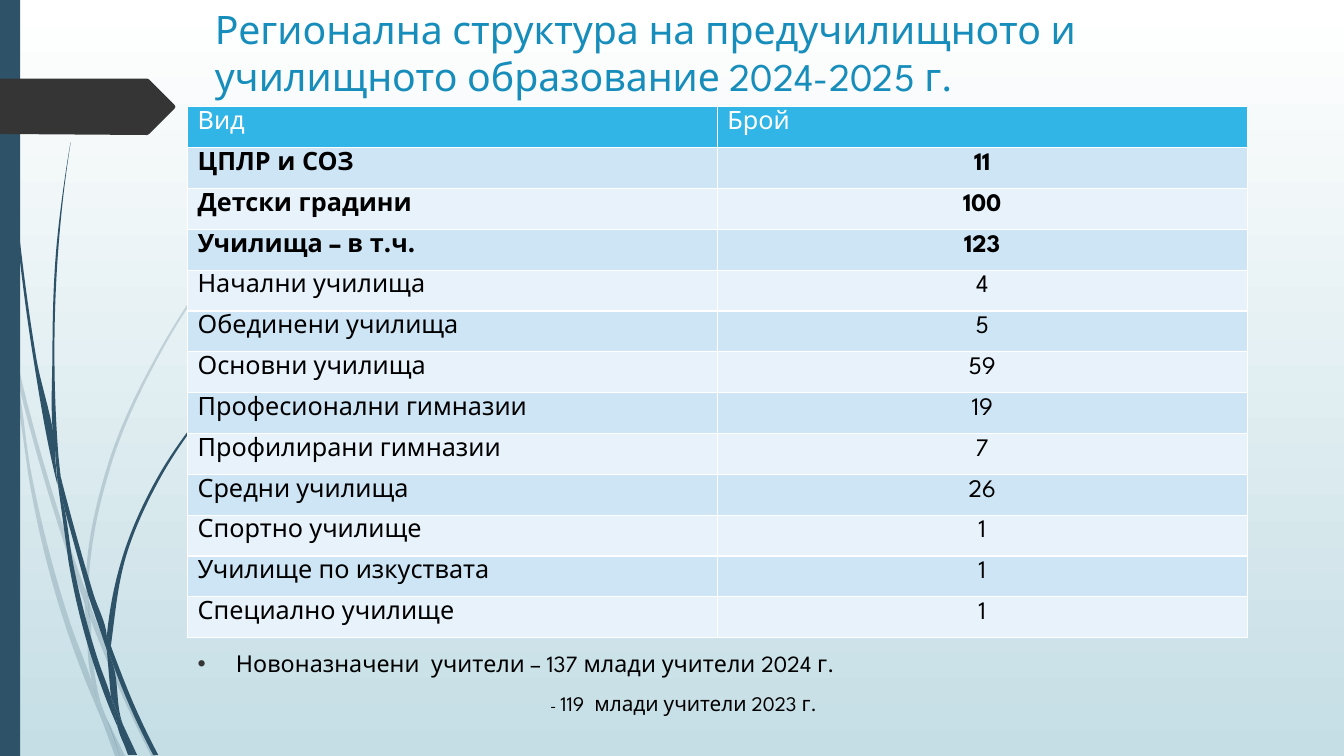
from math import dist

from lxml import etree
from pptx import Presentation
from pptx.dml.color import RGBColor
from pptx.enum.shapes import MSO_SHAPE
from pptx.enum.text import MSO_ANCHOR, MSO_AUTO_SIZE, PP_ALIGN
from pptx.oxml.ns import qn
from pptx.util import Pt

RECT = MSO_SHAPE.RECTANGLE
TOP = MSO_ANCHOR.TOP
NO_FIT = MSO_AUTO_SIZE.NONE
LEFT, CENTER = PP_ALIGN.LEFT, PP_ALIGN.CENTER

PX = 9144
FONT = "League Spartan"
WHITE = RGBColor(0xFF, 0xFF, 0xFF)
BLACK = RGBColor(0x00, 0x00, 0x00)
MIST = RGBColor(0xC5, 0xDE, 0xE5)
NAVY = RGBColor(0x2E, 0x53, 0x69)
CHARCOAL = RGBColor(0x35, 0x35, 0x35)
TITLE_BLUE = RGBColor(0x17, 0x8D, 0xBB)
HEADER_BLUE = RGBColor(0x31, 0xB4, 0xE6)
BAND_DARK = RGBColor(0xCE, 0xE5, 0xF5)
BAND_LIGHT = RGBColor(0xE8, 0xF2, 0xFA)

PALE_STEMS = [
    ([(11, 350), (9, 322), (0, 282)], [(0, 299), (10, 344)]),
    ([(14, 345), (62, 520), (85, 586)], [(84, 599), (58, 522), (17, 376)]),
    ([(88, 596), (92, 607), (127, 692), (155, 750)],
     [(150, 750), (123, 694), (88, 610)]),
    ([(105, 711), (124, 750)], [(119, 750)]),
    ([(11, 350), (17, 376), (31, 469), (70, 619), (93, 683), (99, 707), (101, 714)],
     [(92, 693), (65, 621), (28, 470)]),
    ([(84, 599), (88, 608), (91, 646), (103, 706), (105, 711)],
     [(96, 692), (93, 683), (87, 646)]),
    ([(312, 153), (268, 197), (228, 244), (158, 348), (107, 461), (85, 584), (85, 586)],
     [(88, 596), (88, 584), (110, 462), (160, 349), (229, 245), (268, 198), (312, 154)]),
    ([(101, 714), (119, 750)], [(114, 750)]),
    ([(85, 586), (88, 596), (88, 610)], [(88, 608), (84, 599)]),
    ([(93, 683), (96, 692), (105, 711), (119, 750)], [(101, 714), (99, 707)]),
]
DARK_STEMS = [
    ([(3, 0), (4, 48), (7, 110), (17, 233), (33, 355), (56, 477), (57, 481)],
     [(55, 457), (55, 453), (36, 355), (19, 232), (8, 109), (5, 48), (4, 0)]),
    ([(60, 472), (93, 590), (106, 631), (106, 645)], [(88, 592), (64, 505)]),
    ([(110, 641), (113, 649), (136, 706), (157, 749)],
     [(152, 749), (132, 708), (111, 656)]),
    ([(57, 477), (64, 505), (72, 556), (98, 657), (110, 691), (116, 717), (117, 722)],
     [(111, 708), (93, 659), (68, 557)]),
    ([(70, 141), (62, 193), (56, 245), (52, 349), (55, 449), (60, 472)],
     [(58, 453), (54, 349), (58, 245), (63, 193), (70, 142)]),
    ([(122, 719), (136, 749)], [(133, 749)]),
    ([(55, 449), (60, 472), (64, 505)], [(57, 477), (55, 453)]),
    ([(260, 344), (245, 358), (231, 373), (204, 405), (156, 474), (122, 551), (106, 631)],
     [(110, 641), (111, 633), (125, 552), (158, 476), (205, 406), (231, 374), (245, 359), (261, 344)]),
    ([(117, 722), (131, 749)], [(127, 749)]),
    ([(106, 645), (109, 651), (111, 656), (121, 716), (122, 719)],
     [(116, 706), (110, 691)]),
    ([(106, 631), (110, 641), (111, 656)], [(109, 651), (106, 645)]),
    ([(110, 691), (116, 706), (122, 719), (133, 749)],
     [(130, 749), (117, 722), (116, 717)]),
]
ARROW = [(0, 78), (146, 78), (148, 79), (173, 104), (174, 106),
         (173, 108), (148, 133), (146, 134), (0, 133)]
ROWS = [
    ("Вид", "Брой"),
    ("ЦПЛР и СОЗ", "11"),
    ("Детски градини", "100"),
    ("Училища – в т.ч.", "123"),
    ("Начални училища", "4"),
    ("Обединени училища", "5"),
    ("Основни училища", "59"),
    ("Професионални гимназии", "19"),
    ("Профилирани гимназии", "7"),
    ("Средни училища", "26"),
    ("Спортно училище", "1"),
    ("Училище по изкуствата", "1"),
    ("Специално училище", "1"),
]


def add_text(p, text, size=18, color=BLACK, bold=False, align=LEFT):
    p.alignment = align
    r = p.add_run()
    r.text = text
    r.font.name = FONT
    r.font.size = Pt(size)
    r.font.bold = bold
    r.font.color.rgb = color


def bezier_handles(points):
    if len(points) < 3:
        return []
    spans = [dist(a, b) for a, b in zip(points, points[1:])]
    slopes = [[(q - o) / d for o, q in zip(a, b)]
              for a, b, d in zip(points, points[1:], spans)]
    inner = [[(m * e + n * d) / (d + e) for m, n in zip(u, v)]
             for u, v, d, e in zip(slopes, slopes[1:], spans, spans[1:])]
    first = [2 * m - n for m, n in zip(slopes[0], inner[0])]
    last = [2 * m - n for m, n in zip(slopes[-1], inner[-1])]
    tangents = [first] + inner + [last]
    return [([o + m * d / 3 for o, m in zip(a, u)], [q - n * d / 3 for q, n in zip(b, v)])
            for a, b, u, v, d in zip(points, points[1:], tangents, tangents[1:], spans)]


class Deck:
    def __init__(self, width, height):
        self.prs = Presentation()
        self.prs.slide_width, self.prs.slide_height = width * PX, height * PX
        self.s = self.prs.slides.add_slide(self.prs.slide_layouts[1])

    def background(self, *colors):
        fill = self.s.background.fill
        fill.gradient()
        fill.gradient_angle = 270
        for stop, color in zip(fill.gradient_stops, colors):
            stop.color.rgb = color

    def paint(self, sp, color, alpha=None):
        sp.shadow.inherit = False
        sp.line.fill.background()
        sp.fill.solid()
        sp.fill.fore_color.rgb = color
        if alpha:
            clr = sp.fill._xPr.find(".//" + qn("a:srgbClr"))
            etree.SubElement(clr, qn("a:alpha"), val=str(alpha * 1000))

    def rect(self, x, y, w, h, color):
        self.paint(self.s.shapes.add_shape(RECT, x * PX, y * PX, w * PX, h * PX), color)

    def outline(self, points, color, alpha=None):
        points = [(x * PX, y * PX) for x, y in points]
        fb = self.s.shapes.build_freeform(*points[0])
        fb.add_line_segments(points[1:], close=True)
        sp = fb.convert_to_shape()
        self.paint(sp, color, alpha)
        return sp

    def stem(self, edge, back, color, alpha=None):
        sp = self.outline(edge + back, color, alpha)
        lines = list(sp._element.iter(qn("a:lnTo")))
        for start, points in ((0, edge), (len(edge), back)):
            for ln, handles in zip(lines[start:], bezier_handles(points)):
                ln.tag = qn("a:cubicBezTo")
                for i, (x, y) in enumerate(handles):
                    pt = etree.Element(qn("a:pt"), x=str(round(x * PX) - sp.left),
                                       y=str(round(y * PX) - sp.top))
                    ln.insert(i, pt)

    def placeholder(self, idx, x, y, w, h):
        sp = self.s.placeholders[idx]
        self.s.shapes._spTree.append(sp._element)
        sp.left, sp.top, sp.width, sp.height = x * PX, y * PX, w * PX, h * PX
        tf = sp.text_frame
        tf.word_wrap, tf.auto_size, tf.vertical_anchor = True, NO_FIT, TOP
        return tf

    def indent(self, p, margin, first, bullet=None):
        pPr = p._p.get_or_add_pPr()
        pPr.set("marL", str(margin * PX))
        pPr.set("indent", str(first * PX))
        if bullet:
            clr = etree.SubElement(pPr, qn("a:buClr"))
            etree.SubElement(clr, qn("a:srgbClr"), val=str(CHARCOAL))
            etree.SubElement(pPr, qn("a:buFont"), typeface="Arial")
            etree.SubElement(pPr, qn("a:buChar"), char=bullet)
        else:
            etree.SubElement(pPr, qn("a:buNone"))

    def borders(self, cell):
        tcPr = cell._tc.get_or_add_tcPr()
        for i, side in enumerate(("lnL", "lnR", "lnT", "lnB")):
            ln = etree.Element(qn("a:" + side), w=str(Pt(1)))
            fill = etree.SubElement(ln, qn("a:solidFill"))
            etree.SubElement(fill, qn("a:srgbClr"), val=str(WHITE))
            tcPr.insert(i, ln)

    def table(self, x, y, w, h, rows, bold_rows):
        tbl = self.s.shapes.add_table(len(rows), len(rows[0]),
                                      x * PX, y * PX, w * PX, h * PX).table
        for i, row in enumerate(rows):
            band = BAND_DARK if i % 2 else BAND_LIGHT
            for j, text in enumerate(row):
                cell = tbl.cell(i, j)
                cell.fill.solid()
                cell.fill.fore_color.rgb = band if i else HEADER_BLUE
                self.borders(cell)
                add_text(cell.text_frame.paragraphs[0], text,
                         color=BLACK if i else WHITE, bold=i in bold_rows,
                         align=CENTER if i and j else LEFT)


def main():
    deck = Deck(1333, 750)
    deck.background(WHITE, MIST)
    for edge, back in PALE_STEMS:
        deck.stem(edge, back, NAVY, alpha=20)
    for edge, back in DARK_STEMS:
        deck.stem(edge, back, NAVY)
    deck.rect(0, 0, 20, 750, NAVY)
    deck.outline(ARROW, CHARCOAL)

    p = deck.placeholder(0, 203, 0, 1071, 122).paragraphs[0]
    add_text(p, "Регионална структура на предучилищното и училищното образование 2024-2025 г.",
             size=28, color=TITLE_BLUE)

    tf = deck.placeholder(1, 186, 639, 975, 72)
    p = tf.paragraphs[0]
    deck.indent(p, 38, -38, bullet="•")
    p.space_before = Pt(0)
    add_text(p, "Новоназначени  учители – 137 млади учители 2024 г.", size=16.65)
    p = tf.add_paragraph()
    p.level = 7
    deck.indent(p, 350, 0)
    p.space_before = Pt(10)
    add_text(p, "- ", size=11.1)
    add_text(p, "119  млади учители 2023 г.", size=14.8)

    deck.table(186, 106, 1051, 527, ROWS, bold_rows=(1, 2, 3))
    deck.prs.save("out.pptx")


if __name__ == "__main__":
    main()
